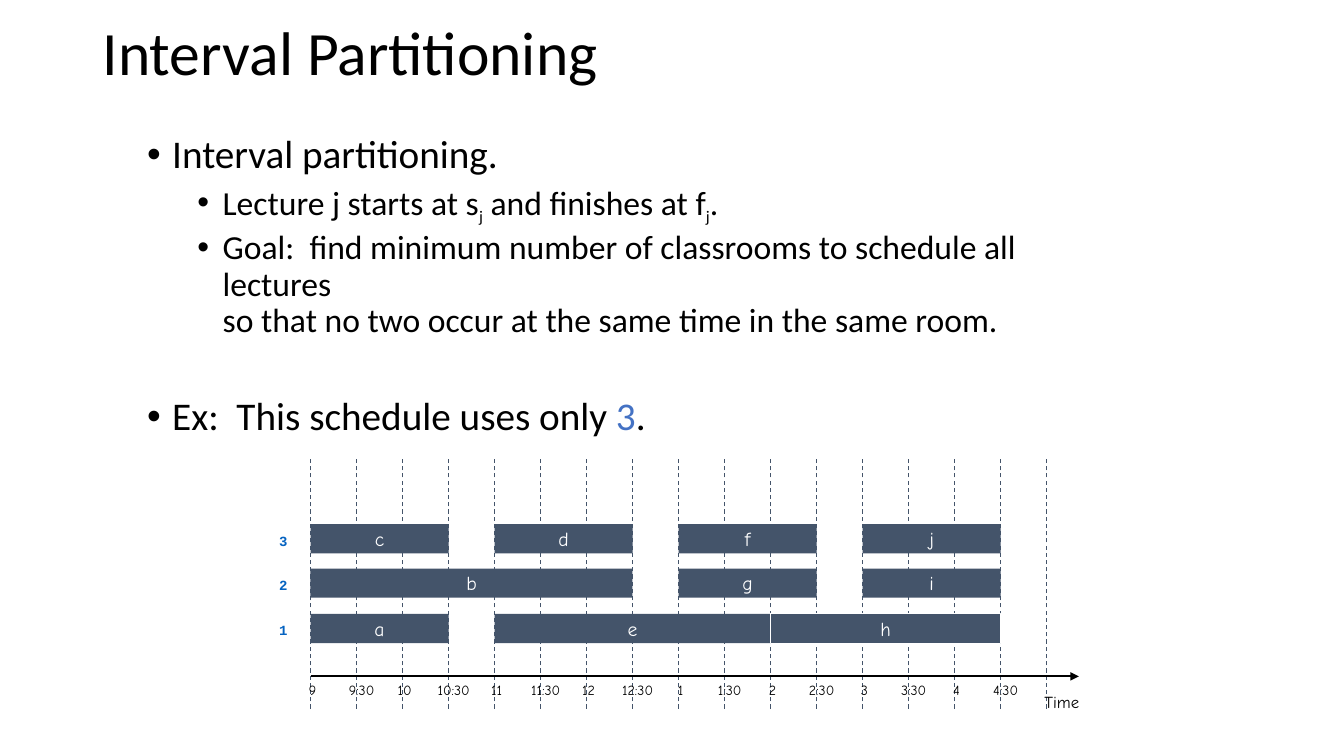
import pptx
import pptx.dml.color
import pptx.enum.dml
import pptx.enum.shapes
import pptx.enum.text
import pptx.util
from pptx.oxml.ns import qn
from pptx.util import Inches, Pt
from lxml import etree

BLACK = pptx.dml.color.RGBColor(0x00, 0x00, 0x00)
WHITE = pptx.dml.color.RGBColor(0xFF, 0xFF, 0xFF)
SLATE = pptx.dml.color.RGBColor(0x44, 0x54, 0x6A)
ACCENT = pptx.dml.color.RGBColor(0x44, 0x72, 0xC4)
ROOM_BLUE = pptx.dml.color.RGBColor(0x05, 0x63, 0xC1)

CENTER = pptx.enum.text.PP_ALIGN.CENTER
MIDDLE = pptx.enum.text.MSO_ANCHOR.MIDDLE
BODY_FONT, CHART_FONT, ROOM_FONT = "Calibri", "Comic Neue", "Courier New"

TIMES = ["9", "9:30", "10", "10:30", "11", "11:30", "12", "12:30",
         "1", "1:30", "2", "2:30", "3", "3:30", "4", "4:30"]
AXIS_LEFT, AXIS_RIGHT, AXIS_TOP = 3.08, 10.7, 6.71
SLOT = 7.3 / len(TIMES)
BAR_HEIGHT = 0.29
ROOM_TOPS = {1: 6.09, 2: 5.64, 3: 5.2}
LECTURES = [("a", 1, 0, 3), ("e", 1, 4, 10), ("h", 1, 10, 15),
            ("b", 2, 0, 7), ("g", 2, 8, 11), ("i", 2, 12, 15),
            ("c", 3, 0, 3), ("d", 3, 4, 7), ("f", 3, 8, 11), ("j", 3, 12, 15)]

BULLETS = [
    (0, 10, [("Interval partitioning.", 28, BLACK)]),
    (1, 5, [("Lecture j starts at s", 24, BLACK), ("j", 20, BLACK),
            (" and finishes at f", 24, BLACK), ("j", 20, BLACK), (".", 24, BLACK)]),
    (1, 5, [("Goal:  find minimum number of classrooms to schedule all lectures", 24, BLACK),
            ("\n", 24, BLACK),
            ("so that no two occur at the same time in the same room.", 24, BLACK)]),
    (0, 41, [("Ex:  This schedule uses only ", 28, BLACK), ("3", 28, ACCENT),
             (".", 28, BLACK)]),
]


def slot_left(index):
    """Return the horizontal place of a half-hour mark in inches."""
    return AXIS_LEFT + index * SLOT


def style_font(font, size, color, name):
    """Set the size, colour and typeface of a font."""
    font.size, font.name = Pt(size), name
    font.color.rgb = color


def add_text(slide, text, box, size, color=BLACK, name=CHART_FONT, wrap=False):
    """Add a one-line text box and return its shape."""
    shape = slide.shapes.add_textbox(*map(Inches, box))
    shape.text_frame.word_wrap = wrap
    paragraph = shape.text_frame.paragraphs[0]
    paragraph.text = text
    style_font(paragraph.runs[0].font, size, color, name)
    return shape


def add_title(slide):
    """Add the slide title."""
    shape = add_text(slide, "Interval Partitioning", (0.92, 0.14, 11.5, 0.82),
                     44, name=BODY_FONT, wrap=True)
    shape.text_frame.vertical_anchor = MIDDLE
    shape.text_frame.paragraphs[0].line_spacing = 0.9


def fill_bullet(paragraph, level, space_before, segments):
    """Write one bulleted paragraph from its text segments."""
    paragraph.level = level
    paragraph.line_spacing = 0.9
    paragraph.space_before = Pt(space_before)
    properties = paragraph._p.get_or_add_pPr()
    properties.set("marL", str(Inches(0.25 + 0.5 * level)))
    properties.set("indent", str(Inches(-0.25)))
    etree.SubElement(properties, qn("a:buFont")).set("typeface", "Arial")
    etree.SubElement(properties, qn("a:buChar")).set("char", "•")
    for text, size, color in segments:
        if text == "\n":
            paragraph.add_line_break()
            continue
        run = paragraph.add_run()
        run.text = text
        style_font(run.font, size, color, BODY_FONT)
        if size == 20:
            run.font._element.set("baseline", "-25000")


def add_bullets(slide):
    """Add the bulleted body text."""
    shape = slide.shapes.add_textbox(*map(Inches, (1.36, 1.29, 9.49, 5.92)))
    frame = shape.text_frame
    frame.word_wrap = True
    for index, bullet in enumerate(BULLETS):
        paragraph = frame.add_paragraph() if index else frame.paragraphs[0]
        fill_bullet(paragraph, *bullet)


def add_line(slide, start, end, color, width):
    """Add a straight line without a shadow and return it."""
    line = slide.shapes.add_connector(
        pptx.enum.shapes.MSO_CONNECTOR.STRAIGHT, *map(Inches, start + end))
    line.line.color.rgb = color
    line.line.width = Pt(width)
    etree.SubElement(line._element.spPr, qn("a:effectLst"))
    return line


def add_time_axis(slide):
    """Add the dashed half-hour marks, the time arrow and its labels."""
    for index in range(len(TIMES) + 1):
        left = slot_left(index)
        mark = add_line(slide, (left, 7.03), (left, 4.55), SLATE, 0.75)
        mark.line.dash_style = pptx.enum.dml.MSO_LINE.DASH
    axis = add_line(slide, (AXIS_LEFT, AXIS_TOP), (AXIS_RIGHT, AXIS_TOP), BLACK, 1.25)
    outline = axis.line._get_or_add_ln()
    etree.SubElement(outline, qn("a:tailEnd")).set("type", "triangle")
    add_text(slide, "Time", (10.26, 6.81, 0.72, 0.3), 12, wrap=True)
    for index, time in enumerate(TIMES):
        shift = 0.05 if ":" in time else 0.02
        label = add_text(slide, time,
                         (slot_left(index) + shift - 0.3, AXIS_TOP, 0.6, 0.27), 10)
        label.text_frame.paragraphs[0].alignment = CENTER


def add_lecture(slide, name, room, start, finish):
    """Add the bar of one lecture in its classroom row."""
    bar = slide.shapes.add_shape(
        pptx.enum.shapes.MSO_SHAPE.RECTANGLE, Inches(slot_left(start)),
        Inches(ROOM_TOPS[room]), Inches((finish - start) * SLOT), Inches(BAR_HEIGHT))
    bar.shadow.inherit = False
    bar.fill.solid()
    bar.fill.fore_color.rgb = SLATE
    if name == "h":
        bar.line.color.rgb = WHITE
        bar.line.width = Pt(0.75)
    else:
        bar.line.fill.background()
    frame = bar.text_frame
    frame.word_wrap = False
    frame.vertical_anchor = MIDDLE
    frame.text = name
    paragraph = frame.paragraphs[0]
    paragraph.alignment = CENTER
    style_font(paragraph.runs[0].font, 14, WHITE, CHART_FONT)


def add_room_number(slide, room, top):
    """Add the number of a classroom beside its row."""
    label = add_text(slide, str(room), (2.67, top + 0.03, 0.29, 0.27), 10,
                     ROOM_BLUE, ROOM_FONT)
    label.text_frame.paragraphs[0].runs[0].font.bold = True


def main():
    """Build the interval partitioning slide."""
    presentation = pptx.Presentation()
    presentation.slide_width = Inches(13.33)
    presentation.slide_height = Inches(7.5)
    slide = presentation.slides.add_slide(presentation.slide_layouts[6])
    add_title(slide)
    add_bullets(slide)
    add_time_axis(slide)
    for lecture in LECTURES:
        add_lecture(slide, *lecture)
    for room, top in ROOM_TOPS.items():
        add_room_number(slide, room, top)
    presentation.save("out.pptx")


if __name__ == "__main__":
    main()
